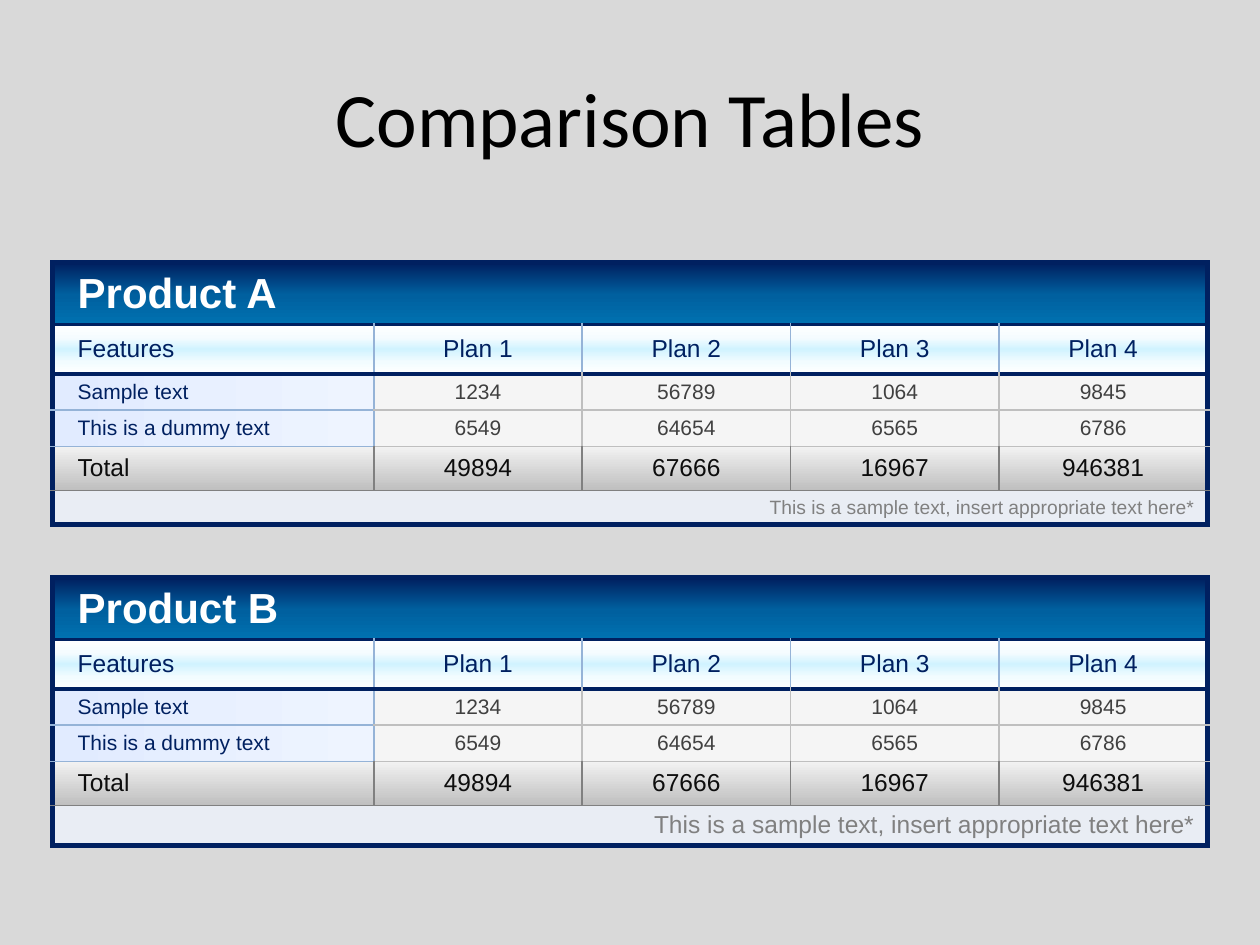
from dataclasses import dataclass

from lxml import etree
from pptx import Presentation
from pptx.dml.color import RGBColor
from pptx.enum.text import MSO_ANCHOR, PP_ALIGN
from pptx.oxml.ns import qn
from pptx.util import Pt

LEFT, CENTER, RIGHT = PP_ALIGN.LEFT, PP_ALIGN.CENTER, PP_ALIGN.RIGHT
MIDDLE = MSO_ANCHOR.MIDDLE

NAVY, BLUE, SILVER, GRAY = "002060", "95B3D7", "BFBFBF", "808080"

# Gradients: angle in degrees, then (position in percent, colour) stops
BANNER = (90, [(0, NAVY), (53, "00609F"), (100, "0071B0")])
GLOSS = (90, [(0, "FFFFFF"), (27, "F5FCFF"), (50, "D1F3FF"),
              (76, "F2FCFF"), (100, "FFFFFF")])
PALE_BLUE = (0, [(0, "E1EBFF"), (100, "EEF4FF")])
STEEL = (270, [(0, SILVER), (100, "F2F2F2")])

OUTER = (NAVY, 3)
RULE = (NAVY, 2.25)
BLUE_LINE, SILVER_LINE, GRAY_LINE = (BLUE, 1), (SILVER, 1), (GRAY, 1)


@dataclass
class RowStyle:
    height: float
    size: float
    label_color: str
    value_color: str
    label_fill: object
    value_fill: object
    label_divider: tuple
    value_divider: tuple
    label_below: tuple
    value_below: tuple
    bold: bool = False
    label_align: object = LEFT


TITLE_ROW = RowStyle(35.3, 24, "FFFFFF", "FFFFFF", BANNER, BANNER,
                     OUTER, OUTER, RULE, RULE, bold=True)
PLAN_ROW = RowStyle(28.4, 14, NAVY, NAVY, GLOSS, GLOSS,
                    BLUE_LINE, BLUE_LINE, RULE, RULE)
FEATURE_ROW = RowStyle(18, 12, NAVY, "404040", PALE_BLUE, "F5F5F5",
                       BLUE_LINE, SILVER_LINE, BLUE_LINE, SILVER_LINE)
TOTAL_ROW = RowStyle(25.2, 14, "0D0D0D", "0D0D0D", STEEL, STEEL,
                     GRAY_LINE, GRAY_LINE, GRAY_LINE, GRAY_LINE)


def note_row(size):
    return RowStyle(13.7, size, GRAY, GRAY, "E9EDF4", "E9EDF4",
                    OUTER, OUTER, OUTER, OUTER, label_align=RIGHT)


def rgb(color):
    return RGBColor.from_string(color)


def add_color(parent, color):
    etree.SubElement(parent, qn("a:srgbClr"), val=color)


class ComparisonSlide:
    font = "Arial"
    title_font = "Calibri"

    def __init__(self, slide, background):
        self.slide = slide
        slide.background.fill.solid()
        slide.background.fill.fore_color.rgb = rgb(background)

    def text_run(self, paragraph, text, size, color, font, align, bold=False):
        paragraph.alignment = align
        run = paragraph.add_run()
        run.text = text
        run.font.size = Pt(size)
        run.font.name = font
        run.font.bold = bold
        run.font.color.rgb = rgb(color)

    def title(self, text, left, top, width, height):
        heading = self.slide.shapes.title
        heading.left, heading.top = Pt(left), Pt(top)
        heading.width, heading.height = Pt(width), Pt(height)
        heading.text_frame.vertical_anchor = MIDDLE
        self.text_run(heading.text_frame.paragraphs[0], text, 44, "000000",
                      self.title_font, CENTER)

    def borders(self, cell, left, right, top, bottom):
        properties = cell._tc.get_or_add_tcPr()
        sides = zip(("lnL", "lnR", "lnT", "lnB"), (left, right, top, bottom))
        for tag, (color, width) in sides:
            line = etree.SubElement(properties, qn("a:" + tag), w=str(Pt(width)))
            add_color(etree.SubElement(line, qn("a:solidFill")), color)

    def fill(self, cell, paint):
        if isinstance(paint, str):
            cell.fill.solid()
            cell.fill.fore_color.rgb = rgb(paint)
            return
        angle, stops = paint
        gradient = etree.SubElement(cell._tc.get_or_add_tcPr(), qn("a:gradFill"))
        stop_list = etree.SubElement(gradient, qn("a:gsLst"))
        for position, color in stops:
            add_color(etree.SubElement(stop_list, qn("a:gs"),
                                       pos=str(position * 1000)), color)
        etree.SubElement(gradient, qn("a:lin"), ang=str(angle * 60000), scaled="0")

    def cell(self, cell, text, style, is_label):
        cell.vertical_anchor = MIDDLE
        if is_label and style.label_align == LEFT:
            cell.margin_left = Pt(14.4)
        self.text_run(cell.text_frame.paragraphs[0], text, style.size,
                      style.label_color if is_label else style.value_color,
                      self.font, style.label_align if is_label else CENTER,
                      style.bold)
        self.fill(cell, style.label_fill if is_label else style.value_fill)

    def table(self, rows, left, top, column_widths):
        height = sum(style.height for style, _ in rows)
        table = self.slide.shapes.add_table(
            len(rows), len(column_widths), Pt(left), Pt(top),
            Pt(sum(column_widths)), Pt(height)).table
        table.first_row = table.horz_banding = False
        for column, width in zip(table.columns, column_widths):
            column.width = Pt(width)

        last = len(column_widths) - 1
        above = [OUTER] * len(column_widths)
        for r, (style, texts) in enumerate(rows):
            table.rows[r].height = Pt(style.height)
            dividers = [OUTER, style.label_divider]
            dividers += [style.value_divider] * (last - 1) + [OUTER]
            below = [style.label_below] + [style.value_below] * last
            # A row with a single text spans the whole table
            if len(texts) == 1:
                table.cell(r, 0).merge(table.cell(r, last))
            for c, text in enumerate(texts):
                cell = table.cell(r, c)
                self.borders(cell, dividers[c], dividers[c + 1], above[c], below[c])
                self.cell(cell, text, style, c == 0)
            above = below


def main():
    presentation = Presentation()
    presentation.slide_width, presentation.slide_height = Pt(720), Pt(540)
    page = ComparisonSlide(
        presentation.slides.add_slide(presentation.slide_layouts[5]), "D9D9D9")

    # Title
    page.title("Comparison Tables", 36, 21.6, 648, 90)

    # One table per product: name, top, size of the closing note
    figures = [
        (PLAN_ROW, ["Features", "Plan 1", "Plan 2", "Plan 3", "Plan 4"]),
        (FEATURE_ROW, ["Sample text", "1234", "56789", "1064", "9845"]),
        (FEATURE_ROW, ["This is a dummy text", "6549", "64654", "6565", "6786"]),
        (TOTAL_ROW, ["Total", "49894", "67666", "16967", "946381"]),
    ]
    note = "This is a sample text, insert appropriate text here*"
    for product, top, note_size in (("Product A", 150, 11), ("Product B", 330, 14)):
        rows = [(TITLE_ROW, [product]), *figures, (note_row(note_size), [note])]
        page.table(rows, 30, top, [183.6] + [119.1] * 4)

    presentation.save("out.pptx")


if __name__ == "__main__":
    main()
